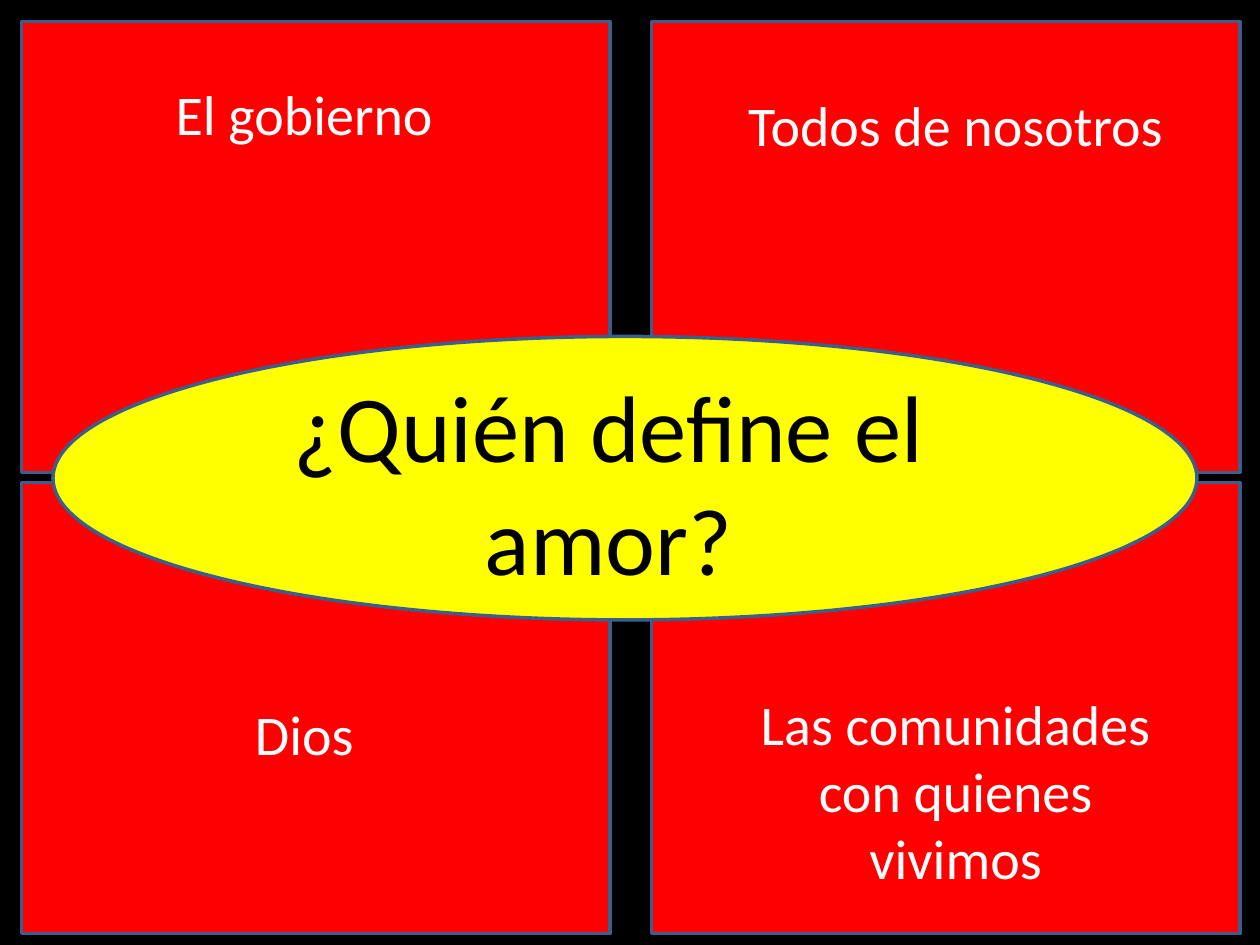
from pptx import Presentation
from pptx.dml.color import RGBColor
from pptx.enum.shapes import MSO_SHAPE as Shape
from pptx.enum.text import MSO_ANCHOR as Anchor, MSO_AUTO_SIZE as AutoSize, PP_ALIGN as Align
from pptx.util import Inches, Pt

BLACK = RGBColor(0x00, 0x00, 0x00)
WHITE = RGBColor(0xFF, 0xFF, 0xFF)
RED = RGBColor(0xFF, 0x00, 0x00)
YELLOW = RGBColor(0xFF, 0xFF, 0x00)
BLUE = RGBColor(0x3A, 0x5F, 0x8C)

PANEL_LEFTS = (0.17, 5.17)
PANEL_TOPS = (0.17, 3.83)
ANSWER_LEFTS = (0.5, 5.67)
ANSWERS = (
    ("El gobierno", 0, 0.58, 0.64),
    ("Todos de nosotros", 1, 0.67, 0.64),
    ("Dios", 0, 5.5, 0.64),
    ("Las comunidades con quienes vivimos", 1, 5.42, 1.72),
)


def add_outlined(page, kind, left, top, width, height, fill):
    shape = page.shapes.add_shape(
        kind, Inches(left), Inches(top), Inches(width), Inches(height))
    shape.shadow.inherit = False
    shape.fill.solid()
    shape.fill.fore_color.rgb = fill
    shape.line.color.rgb = BLUE
    shape.line.width = Pt(2)


def write_text(box, text, size, color):
    frame = box.text_frame
    frame.text = text
    frame.word_wrap = True
    frame.auto_size = AutoSize.SHAPE_TO_FIT_TEXT
    frame.vertical_anchor = Anchor.TOP
    para = frame.paragraphs[0]
    para.alignment = Align.CENTER
    para.font.name = "Calibri"
    para.font.size = Pt(size)
    para.font.color.rgb = color


def add_answer(page, text, column, top, height):
    box = page.shapes.add_textbox(
        Inches(ANSWER_LEFTS[column]), Inches(top), Inches(3.83), Inches(height))
    write_text(box, text, 32, WHITE)


def place_question(page, text):
    title = page.shapes.title
    title.left, title.top = Inches(1.83), Inches(2.87)
    title.width, title.height = Inches(6), Inches(1.92)
    write_text(title, text, 54, BLACK)
    title.element.getparent().append(title.element)


def main():
    deck = Presentation()
    deck.slide_width, deck.slide_height = Inches(10), Inches(7.5)
    page = deck.slides.add_slide(deck.slide_layouts[5])
    page.background.fill.solid()
    page.background.fill.fore_color.rgb = BLACK

    for top in PANEL_TOPS:
        for left in PANEL_LEFTS:
            add_outlined(page, Shape.RECTANGLE, left, top, 4.67, 3.58, RED)
    add_outlined(page, Shape.OVAL, 0.42, 2.67, 9.08, 2.25, YELLOW)
    place_question(page, "¿Quién define el amor?")
    for answer in ANSWERS:
        add_answer(page, *answer)

    deck.save("out.pptx")


if __name__ == "__main__":
    main()
